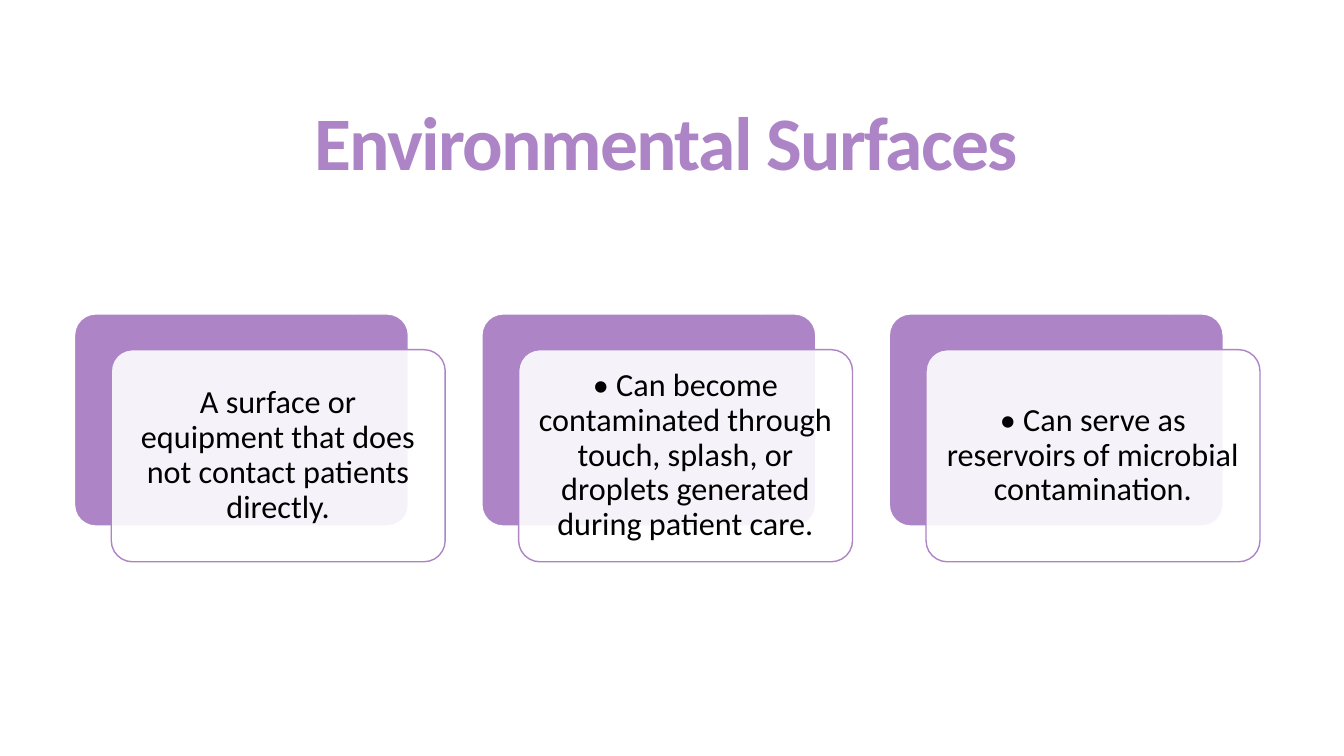
from dataclasses import dataclass

from lxml.etree import SubElement
from pptx import Presentation
from pptx.dml.color import RGBColor
from pptx.enum.shapes import MSO_SHAPE
from pptx.enum.text import MSO_ANCHOR, PP_ALIGN
from pptx.oxml.ns import qn
from pptx.shapes.autoshape import Shape
from pptx.slide import Slide
from pptx.text.text import TextFrame
from pptx.util import Emu, Pt


@dataclass(frozen=True)
class Theme:
    accent: RGBColor = RGBColor(0xAD, 0x84, 0xC6)
    paper: RGBColor = RGBColor(0xFF, 0xFF, 0xFF)
    ink: RGBColor = RGBColor(0x00, 0x00, 0x00)
    font: str = "Calibri"
    title_size: int = 54
    body_size: int = 23
    title_tracking: int = -120
    card_opacity: int = 90


@dataclass(frozen=True)
class Box:
    left: int
    top: int
    width: int
    height: int

    def moved(self, right: int, down: int) -> "Box":
        return Box(self.left + right, self.top + down, self.width, self.height)

    def emu(self) -> tuple[Emu, Emu, Emu, Emu]:
        return px(self.left), px(self.top), px(self.width), px(self.height)


@dataclass(frozen=True)
class Card:
    text: str


THEME = Theme()
EMU_PER_PX = 9525
TITLE_BOX = Box(69, 53, 1131, 174)
FIRST_CARD_BACK = Box(71, 299, 318, 202)
CARD_PITCH = 388
FRONT_OFFSET = (35, 34)
CARD_MARGIN = 10
CARDS = (
    Card("A surface or equipment that does not contact patients directly."),
    Card("• Can become contaminated through touch, splash, or droplets "
         "generated during patient care."),
    Card("• Can serve as reservoirs of microbial contamination."),
)


def px(length: int) -> Emu:
    return Emu(length * EMU_PER_PX)


def write_text(frame: TextFrame, text: str, size: int, color: RGBColor,
               line_spacing: float, bold: bool = False) -> None:
    frame.word_wrap = True
    frame.vertical_anchor = MSO_ANCHOR.MIDDLE
    paragraph = frame.paragraphs[0]
    paragraph.text = text
    paragraph.alignment = PP_ALIGN.CENTER
    paragraph.line_spacing = line_spacing
    paragraph.font.name = THEME.font
    paragraph.font.size = Pt(size)
    paragraph.font.bold = bold
    paragraph.font.color.rgb = color


def add_title(slide: Slide, text: str) -> None:
    frame = slide.shapes.add_textbox(*TITLE_BOX.emu()).text_frame
    write_text(frame, text, THEME.title_size, THEME.accent, 0.85, bold=True)
    run = frame.paragraphs[0].runs[0]
    run._r.get_or_add_rPr().set("spc", str(THEME.title_tracking))


def add_panel(slide: Slide, box: Box, fill: RGBColor, line: RGBColor) -> Shape:
    shape = slide.shapes.add_shape(MSO_SHAPE.ROUNDED_RECTANGLE, *box.emu())
    shape.adjustments[0] = 0.1
    shape.shadow.inherit = False
    shape.fill.solid()
    shape.fill.fore_color.rgb = fill
    shape.line.color.rgb = line
    shape.line.width = Pt(1)
    return shape


def set_opacity(shape: Shape, percent: int) -> None:
    color = shape._element.spPr.find(qn("a:solidFill")).find(qn("a:srgbClr"))
    SubElement(color, qn("a:alpha")).set("val", str(percent * 1000))


def add_card(slide: Slide, card: Card, back: Box) -> None:
    add_panel(slide, back, THEME.accent, THEME.paper)
    front = add_panel(slide, back.moved(*FRONT_OFFSET), THEME.paper, THEME.accent)
    set_opacity(front, THEME.card_opacity)
    frame = front.text_frame
    frame.margin_left = frame.margin_right = px(CARD_MARGIN)
    frame.margin_top = frame.margin_bottom = px(CARD_MARGIN)
    write_text(frame, card.text, THEME.body_size, THEME.ink, 0.9)


def main() -> None:
    presentation = Presentation()
    presentation.slide_width, presentation.slide_height = px(1280), px(720)
    slide = presentation.slides.add_slide(presentation.slide_layouts[6])

    # Title
    add_title(slide, "Environmental Surfaces")

    # Row of layered cards
    for index, card in enumerate(CARDS):
        add_card(slide, card, FIRST_CARD_BACK.moved(index * CARD_PITCH, 0))

    presentation.save("out.pptx")


if __name__ == "__main__":
    main()
